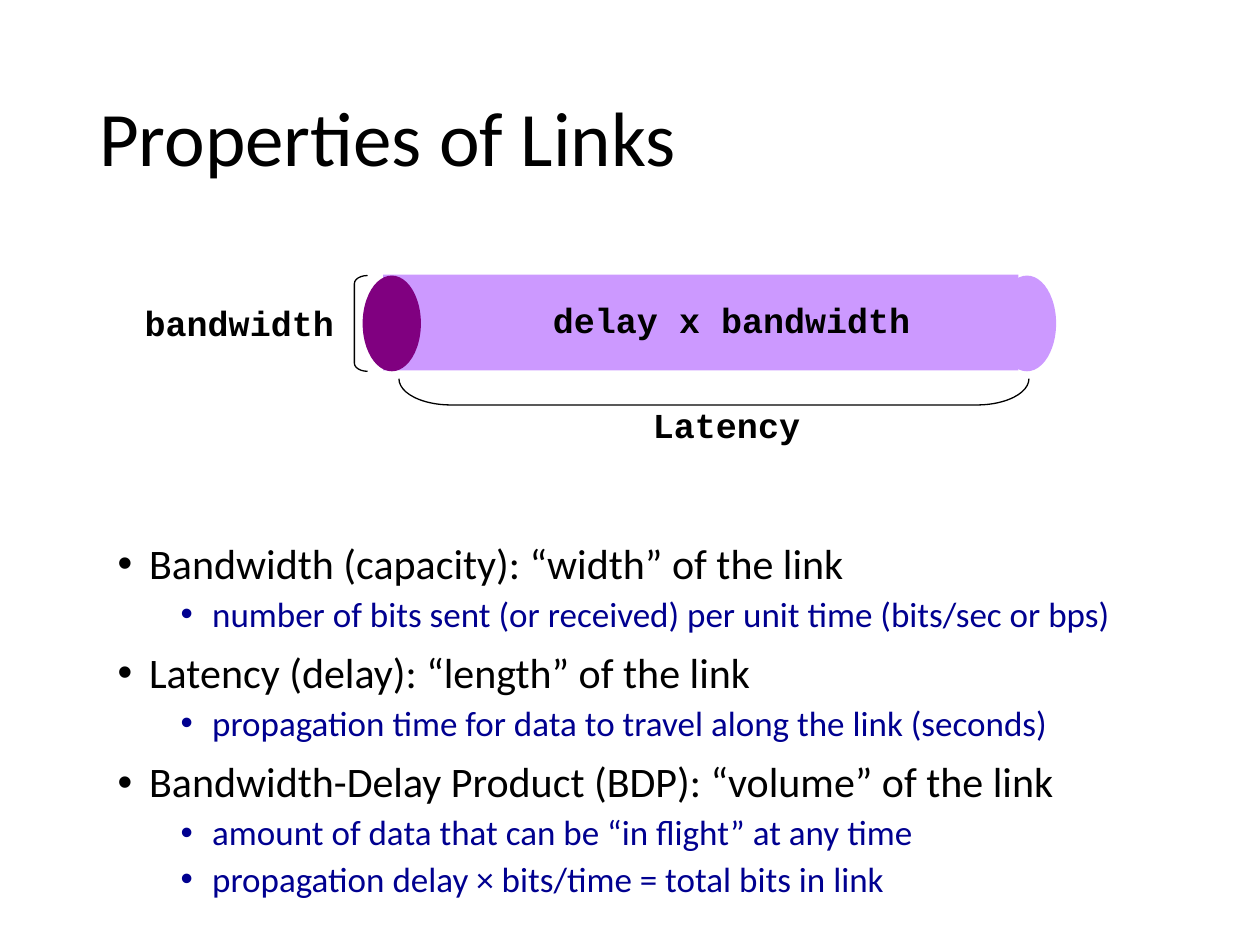
from lxml.etree import SubElement
from pptx import Presentation
from pptx.dml.color import RGBColor
from pptx.enum.shapes import MSO_SHAPE as Preset
from pptx.enum.text import MSO_ANCHOR as Anchor, MSO_AUTO_SIZE as AutoSize, PP_ALIGN as Align
from pptx.oxml.ns import qn
from pptx.util import Pt

BLACK, NAVY, LILAC, PURPLE = "000000", "000090", "CC99FF", "800080"

# Text, level
POINTS = [
    ("Bandwidth (capacity): “width” of the link", 0),
    ("number of bits sent (or received) per unit time (bits/sec or bps)", 1),
    ("Latency (delay): “length” of the link", 0),
    ("propagation time for data to travel along the link (seconds)", 1),
    ("Bandwidth-Delay Product (BDP): “volume” of the link", 0),
    ("amount of data that can be “in flight” at any time", 1),
    ("propagation delay × bits/time = total bits in link", 1),
]
# Size, colour, left margin and space before for each level
LEVELS = [(24, BLACK, 18, 10), (20, NAVY, 54, 5)]


def color(value):
    return RGBColor.from_string(value)


class SlideBuilder:
    body_font = "Calibri"
    label_font = "Courier New"

    def __init__(self, page):
        self.page = page

    def place(self, shape, area):
        shape.left, shape.top, shape.width, shape.height = map(Pt, area)

    def style(self, para, name, size, value, bold=False):
        for span in para.runs:
            span.font.name, span.font.size, span.font.bold = name, Pt(size), bold
            span.font.color.rgb = color(value)

    def title(self, text, area):
        box = self.page.shapes.title
        self.place(box, area)
        frame = box.text_frame
        frame.text = text
        frame.auto_size = AutoSize.NONE
        frame.vertical_anchor = Anchor.MIDDLE
        para = frame.paragraphs[0]
        para.alignment = Align.LEFT
        para.line_spacing = 0.9
        self.style(para, self.body_font, 44, BLACK)

    def bullets(self, points, area):
        box = self.page.placeholders[1]
        self.place(box, area)
        frame = box.text_frame
        frame.auto_size = AutoSize.NONE
        frame.text = "\n".join(text for text, _ in points)
        for index, (para, (_, level)) in enumerate(zip(frame.paragraphs, points)):
            size, value, margin, before = LEVELS[level]
            para.level = level
            props = para._p.get_or_add_pPr()
            props.set("marL", str(Pt(margin)))
            props.set("indent", str(-Pt(18)))
            SubElement(props, qn("a:buFont"), typeface="Arial")
            SubElement(props, qn("a:buChar"), char="•")
            para.line_spacing = 0.9
            para.space_before = Pt(before if index else 0)
            self.style(para, self.body_font, size, value)

    def solid(self, preset, fill, area):
        shape = self.page.shapes.add_shape(preset, *map(Pt, area))
        shape.shadow.inherit = False
        shape.fill.solid()
        shape.fill.fore_color.rgb = color(fill)
        shape.line.fill.background()

    def bracket(self, area, curve, rotation=0):
        shape = self.page.shapes.add_shape(Preset.LEFT_BRACKET, *map(Pt, area))
        shape.shadow.inherit = False
        shape.adjustments[0] = curve
        shape.rotation = rotation
        shape.fill.background()
        shape.line.color.rgb = color(BLACK)
        shape.line.width = Pt(0.75)

    def label(self, text, area):
        box = self.page.shapes.add_textbox(*map(Pt, area))
        frame = box.text_frame
        frame.text = text
        frame.word_wrap = False
        frame.auto_size = AutoSize.SHAPE_TO_FIT_TEXT
        self.style(frame.paragraphs[0], self.label_font, 20, BLACK, bold=True)


def main():
    deck = Presentation()
    deck.slide_width, deck.slide_height = Pt(720), Pt(540)
    slide = SlideBuilder(deck.slides.add_slide(deck.slide_layouts[1]))

    slide.title("Properties of Links", (49.5, 28.8, 621, 104.4))
    slide.bullets(POINTS, (60, 306.5, 672, 233.5))

    pipe_top, pipe_height, end_width = 157.5, 54.7, 33.3
    slide.solid(Preset.OVAL, LILAC, (570.2, pipe_top, end_width, pipe_height))
    slide.solid(Preset.RECTANGLE, LILAC, (219, pipe_top - 0.5, 363, pipe_height))
    slide.solid(Preset.OVAL, PURPLE, (207.2, pipe_top, end_width, pipe_height))

    slide.label("bandwidth", (75.6, 168.5, 122.4, 31))
    slide.bracket((202.5, pipe_top, 7.5, pipe_height), 0.61)
    slide.bracket((400.5, 43.9, 15, 360), 1.98, rotation=270)
    slide.label("Latency", (366, 226.8, 99.4, 31))
    slide.label("delay x bandwidth", (308.9, 167, 220.3, 31))

    deck.save("out.pptx")


if __name__ == "__main__":
    main()
